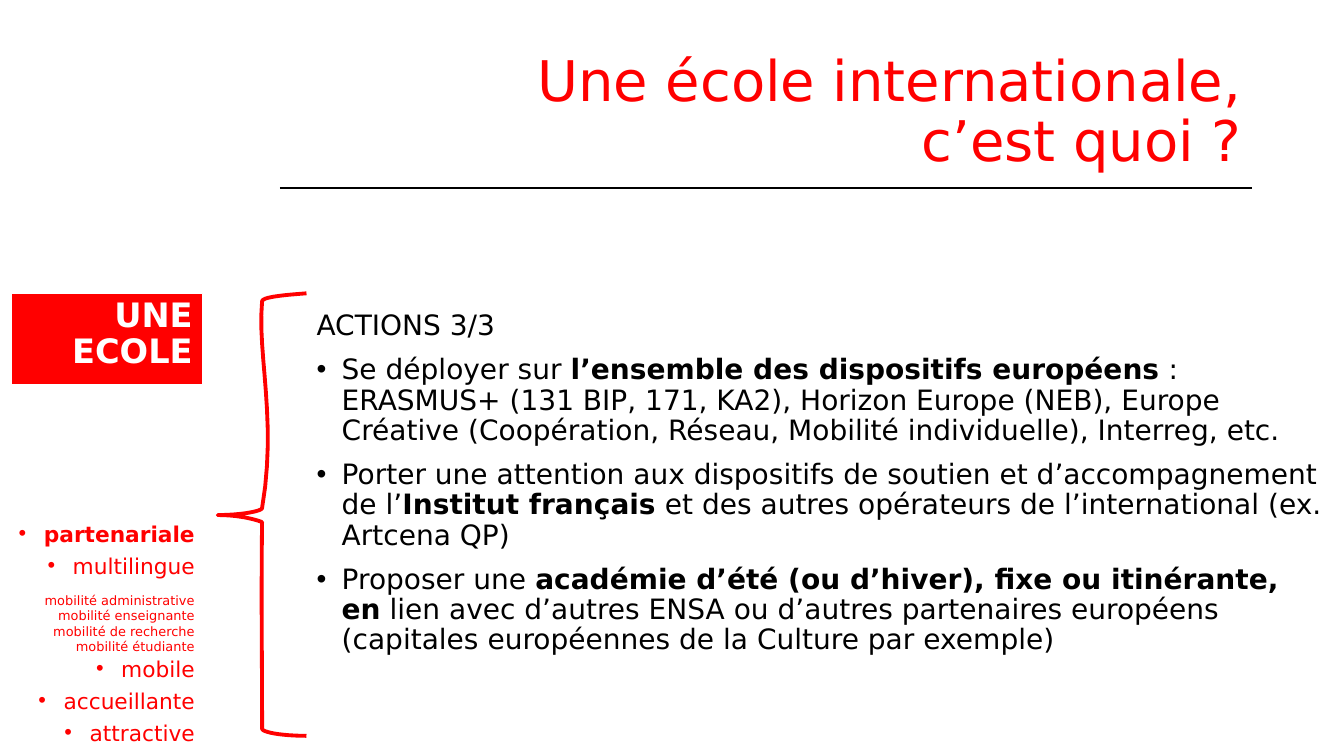
from lxml import etree
from pptx import Presentation
from pptx.dml.color import RGBColor
from pptx.enum import shapes, text
from pptx.oxml.ns import qn
from pptx.util import Pt

RED = RGBColor(0xFF, 0x00, 0x00)
BLACK = RGBColor(0x00, 0x00, 0x00)
WHITE = RGBColor(0xFF, 0xFF, 0xFF)
FONT = "DejaVu Sans"
INDENT = 18
CURVE_STEPS = 12

ACTIONS = [
    ["Se déployer sur ", "l’ensemble des dispositifs européens",
     " : ERASMUS+ (131 BIP, 171, KA2), Horizon Europe (NEB), Europe Créative "
     "(Coopération, Réseau, Mobilité individuelle), Interreg, etc."],
    ["Porter une attention aux dispositifs de soutien et d’accompagnement de l’",
     "Institut français",
     " et des autres opérateurs de l’international (ex. Artcena QP)"],
    ["Proposer une ", "académie d’été (ou d’hiver), fixe ou itinérante, en",
     " lien avec d’autres ENSA ou d’autres partenaires européens "
     "(capitales européennes de la Culture par exemple)"],
]
MOBILITIES = ["mobilité administrative", "mobilité enseignante",
              "mobilité de recherche", "mobilité étudiante"]
QUALITIES = (
    [("partenariale", 0), ("multilingue", 10)]
    + [(name, 0 if index else 10) for index, name in enumerate(MOBILITIES)]
    + [("mobile", 6), ("accueillante", 10), ("attractive", 10)]
)

BRACE_START = (218.9, 525.6)
BRACE_CURVES = [
    ((200.9, 525.6), (187.2, 523), (187.2, 520.5)),
    ((187.2, 468.7), (186.5, 422.6), (187.2, 373)),
    ((185.8, 372.2), (173.5, 367.9), (155.5, 367.9)),
    ((172.8, 367.9), (187.2, 365), (187.2, 362.9)),
    ((198, 300.2), (183.6, 252.7), (187.2, 215.3)),
    ((187.2, 212.4), (199.4, 211), (218.9, 209.5)),
]


def place(shape, left, top, width, height):
    shape.left, shape.top = Pt(left), Pt(top)
    shape.width, shape.height = Pt(width), Pt(height)


def set_frame(frame, anchor):
    frame.word_wrap = True
    frame.auto_size = text.MSO_AUTO_SIZE.NONE
    frame.vertical_anchor = anchor


def format_paragraph(paragraph, align, spacing, before, bullet=False):
    paragraph.alignment = align
    paragraph.line_spacing = spacing
    paragraph.space_before = Pt(before)
    properties = paragraph._p.get_or_add_pPr()
    indent = Pt(INDENT) if bullet else 0
    properties.set("marL", str(indent))
    properties.set("indent", str(-indent))
    if bullet:
        etree.SubElement(properties, qn("a:buFont"), typeface="Arial")
        etree.SubElement(properties, qn("a:buChar"), char="•")
    else:
        etree.SubElement(properties, qn("a:buNone"))


def format_runs(paragraph, size, color, bold=False):
    for run in paragraph.runs:
        run.font.name = FONT
        run.font.size = Pt(size)
        run.font.color.rgb = color
        run.font.bold = bold


def next_paragraph(frame, index):
    return frame.add_paragraph() if index else frame.paragraphs[0]


def add_title(slide):
    title = slide.shapes.title
    place(title, 200, 28.8, 694, 104.4)
    set_frame(title.text_frame, text.MSO_ANCHOR.MIDDLE)
    title.text_frame.text = "Une école internationale,\vc’est quoi ?"
    paragraph = title.text_frame.paragraphs[0]
    format_paragraph(paragraph, text.PP_ALIGN.RIGHT, 0.9, 0)
    format_runs(paragraph, 40, RED)


def add_rule(slide):
    rule = slide.shapes.add_connector(
        shapes.MSO_CONNECTOR.STRAIGHT, Pt(200), Pt(134.6), Pt(894), Pt(134.6))
    rule.line.color.rgb = BLACK
    rule.line.width = Pt(1.5)
    etree.SubElement(rule._element.spPr, qn("a:effectLst"))


def add_qualities(slide):
    box = slide.shapes.add_textbox(Pt(2.2), Pt(373.5), Pt(144), Pt(163.5))
    set_frame(box.text_frame, text.MSO_ANCHOR.TOP)
    for index, (name, before) in enumerate(QUALITIES):
        paragraph = next_paragraph(box.text_frame, index)
        paragraph.text = name
        detail = name in MOBILITIES
        format_paragraph(paragraph, text.PP_ALIGN.RIGHT, 1 if detail else 0.7,
                         before, not detail)
        format_runs(paragraph, 9.2 if detail else 15.5, RED, index == 0)


def add_school_label(slide):
    label = slide.shapes.add_shape(
        shapes.MSO_SHAPE.RECTANGLE, Pt(7.9), Pt(209.5), Pt(136.8), Pt(65.5))
    label.shadow.inherit = False
    label.fill.solid()
    label.fill.fore_color.rgb = RED
    label.line.color.rgb = WHITE
    label.line.width = Pt(0.75)
    set_frame(label.text_frame, text.MSO_ANCHOR.TOP)
    label.text_frame.text = "UNE\nECOLE"
    for paragraph in label.text_frame.paragraphs:
        format_paragraph(paragraph, text.PP_ALIGN.RIGHT, 0.9, 0)
        format_runs(paragraph, 24, WHITE, True)


def add_actions(slide):
    body = slide.placeholders[1]
    place(body, 218.9, 203, 733.7, 285)
    frame = body.text_frame
    set_frame(frame, text.MSO_ANCHOR.MIDDLE)
    for index, parts in enumerate([["ACTIONS 3/3"]] + ACTIONS):
        paragraph = next_paragraph(frame, index)
        for part in parts:
            paragraph.add_run().text = part
        format_paragraph(paragraph, text.PP_ALIGN.LEFT, 0.9,
                         10 if index else 0, index > 0)
        format_runs(paragraph, 20, BLACK)
        if index:
            paragraph.runs[1].font.bold = True


def curve_points(start, first, second, end):
    for step in range(1, CURVE_STEPS + 1):
        t = step / CURVE_STEPS
        weights = ((1 - t) ** 3, 3 * t * (1 - t) ** 2, 3 * t * t * (1 - t), t ** 3)
        corners = (start, first, second, end)
        yield tuple(Pt(sum(w * c[axis] for w, c in zip(weights, corners)))
                    for axis in (0, 1))


def add_brace(slide):
    builder = slide.shapes.build_freeform(Pt(BRACE_START[0]), Pt(BRACE_START[1]))
    start = BRACE_START
    for first, second, end in BRACE_CURVES:
        builder.add_line_segments(curve_points(start, first, second, end), close=False)
        start = end
    brace = builder.convert_to_shape()
    brace.shadow.inherit = False
    brace.fill.background()
    brace.line.color.rgb = RED
    brace.line.width = Pt(2.75)


def main():
    presentation = Presentation()
    presentation.slide_width, presentation.slide_height = Pt(960), Pt(540)
    slide = presentation.slides.add_slide(presentation.slide_layouts[1])
    add_rule(slide)
    add_title(slide)
    add_qualities(slide)
    add_school_label(slide)
    add_actions(slide)
    add_brace(slide)
    presentation.save("out.pptx")


if __name__ == "__main__":
    main()
